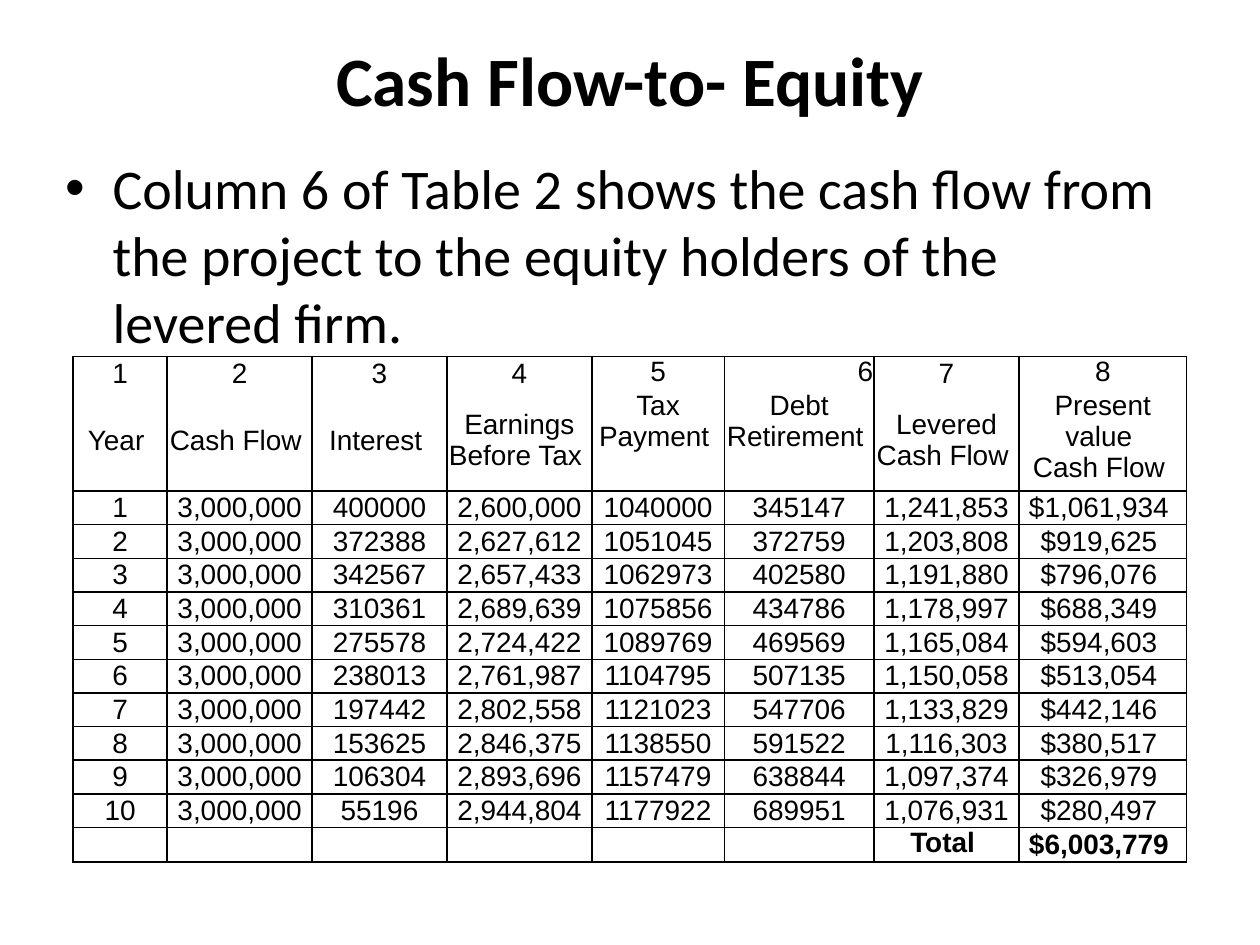
from pptx import Presentation
from pptx.dml.color import RGBColor as RGB
from pptx.enum.text import MSO_ANCHOR as Anchor, PP_ALIGN as Align
from pptx.oxml.ns import qn
from pptx.util import Cm, Pt
from lxml.etree import SubElement as Sub

COLORS = {"ink": "000000"}
WIDTHS = [1.9, 2.92, 2.72, 2.92, 2.67, 3.02, 2.92, 3.38]
ROW = 0.65
HEADS = ["Year ", "Cash Flow ", "Interest ", "Earnings Before Tax ", "Tax Payment ",
         "Debt Retirement ", "Levered Cash Flow ", "Present value \nCash Flow "]
FLOWS = [
    ("400000", "2,600,000", "1040000", "345147", "1,241,853", "$1,061,934 "),
    ("372388", "2,627,612", "1051045", "372759", "1,203,808", "$919,625 "),
    ("342567", "2,657,433", "1062973", "402580", "1,191,880", "$796,076 "),
    ("310361", "2,689,639", "1075856", "434786", "1,178,997", "$688,349 "),
    ("275578", "2,724,422", "1089769", "469569", "1,165,084", "$594,603 "),
    ("238013", "2,761,987", "1104795", "507135", "1,150,058", "$513,054 "),
    ("197442", "2,802,558", "1121023", "547706", "1,133,829", "$442,146 "),
    ("153625", "2,846,375", "1138550", "591522", "1,116,303", "$380,517 "),
    ("106304", "2,893,696", "1157479", "638844", "1,097,374", "$326,979 "),
    ("55196", "2,944,804", "1177922", "689951", "1,076,931", "$280,497 "),
]
TOTAL = [""] * 6 + ["Total ", "$6,003,779 "]


def style(par, name, size, bold=False):
    """Set the font of a paragraph."""
    font = par.font
    font.name, font.size, font.bold = name, Pt(size), bold
    font.color.rgb = RGB.from_string(COLORS["ink"])


def add_text(slide, box, text, size, bold=False):
    """Add a wrapped text box and return its frame and paragraph."""
    frame = slide.shapes.add_textbox(*map(Cm, box)).text_frame
    frame.word_wrap = True
    frame.text = text
    par = frame.paragraphs[0]
    style(par, "Calibri", size, bold)
    return frame, par


def add_title(slide, text):
    """Add the centred slide title."""
    frame, par = add_text(slide, (1.27, 0.76, 22.86, 3.18), text, 39.6, True)
    frame.margin_top = 0
    par.alignment = Align.CENTER


def add_bullet(slide, text):
    """Add the bulleted statement with a hanging indent."""
    par = add_text(slide, (1.07, 2.97, 22.86, 12.57), text, 32)[1]
    par.space_before = Pt(6.4)
    props = par._p.get_or_add_pPr()
    props.set("marL", str(Cm(0.95)))
    props.set("indent", str(-Cm(0.95)))
    Sub(props, qn("a:buFont"), typeface="Arial")
    Sub(props, qn("a:buChar"), char="•")


def add_edges(cell, hidden):
    """Draw the cell borders, leaving out the hidden sides."""
    props = cell._tc.get_or_add_tcPr()
    for side in "LRTB":
        line = Sub(props, qn("a:ln" + side), w=str(Pt(1)))
        if side in hidden:
            Sub(line, qn("a:noFill"))
        else:
            fill = Sub(line, qn("a:solidFill"))
            Sub(fill, qn("a:srgbClr"), val=COLORS["ink"])


def fill_cell(cell, text, align, anchor, bold, hidden):
    """Write and format one table cell."""
    cell.text = text
    cell.margin_left = cell.margin_right = Cm(0.02)
    cell.margin_top = cell.margin_bottom = 0
    cell.vertical_anchor = anchor
    for par in cell.text_frame.paragraphs:
        par.alignment = align
        style(par, "Arial", 16, bold)
    add_edges(cell, hidden)
    cell.fill.background()


def add_grid(slide):
    """Add the cash flow table."""
    nums = [str(n) for n in range(1, len(HEADS) + 1)]
    years = [[str(n), "3,000,000", *flow] for n, flow in enumerate(FLOWS, 1)]
    rows = [nums, HEADS, *years, TOTAL]
    tall = [ROW, 3 * ROW] + [ROW] * len(years) + [0.7]
    grid = slide.shapes.add_table(len(rows), len(WIDTHS), Cm(1.47), Cm(7.19),
                                  Cm(sum(WIDTHS)), Cm(sum(tall))).table
    grid.first_row = grid.horz_banding = False
    for col, width in zip(grid.columns, WIDTHS):
        col.width = Cm(width)
    for r, (row, height) in enumerate(zip(rows, tall)):
        grid.rows[r].height = Cm(height)
        for c, text in enumerate(row):
            top = r < 2 and c in (4, 5, 7) or text == "Total "
            fill_cell(grid.cell(r, c), text,
                      Align.RIGHT if (r, c) == (0, 5) else Align.CENTER,
                      Anchor.TOP if top else Anchor.MIDDLE,
                      row is TOTAL, {0: "B", 1: "T"}.get(r, ""))


def main():
    """Build and save the slide."""
    deck = Presentation()
    deck.slide_width, deck.slide_height = Cm(25.4), Cm(19.05)
    slide = deck.slides.add_slide(deck.slide_layouts[6])
    add_title(slide, "Cash Flow-to- Equity")
    add_bullet(slide, "Column 6 of Table 2 shows the cash flow from the project "
                      "to the equity holders of the levered firm.")
    add_grid(slide)
    deck.save("out.pptx")


if __name__ == "__main__":
    main()
